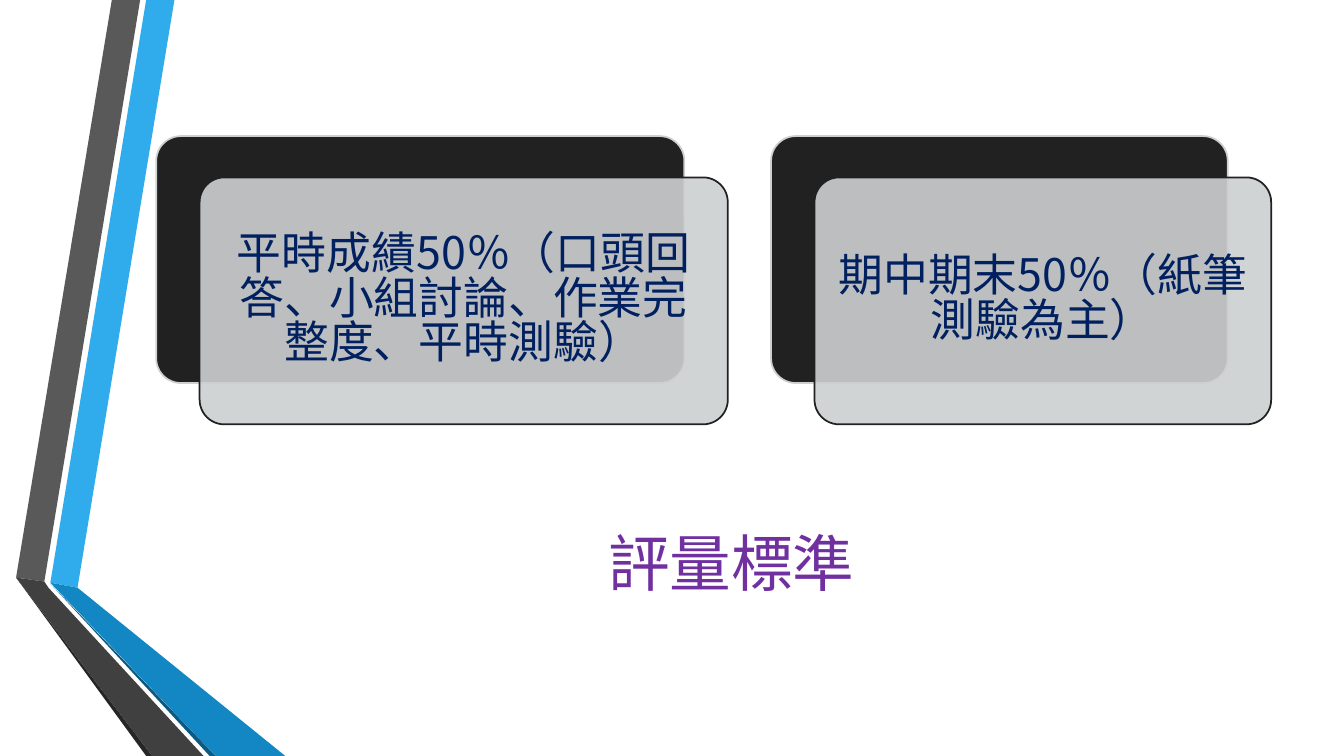
from lxml import etree
from pptx import Presentation
from pptx.dml.color import RGBColor
from pptx.enum import shapes, text
from pptx.oxml.ns import qn
from pptx.util import Pt

FONT = "Noto Sans CJK SC"
COLORS = {
    "blue": "30ACEC", "gray": "595959", "black": "262626",
    "navy": "0C5A82", "deep_blue": "1287C3", "dark_gray": "404040",
    "card_back": "212121", "card_front": "CDD0D1",
    "title": "7030A0", "body": "002060",
}
TITLE = "評量標準"
CARDS = [
    ("平時成績50％（口頭回答、小組討論、作業完整度、平時測驗）", 111.6, 377.3),
    ("期中期末50％（紙筆測驗為主）", 550.8, 326.2),
]
CARD_TOP, CARD_HEIGHT = 97.2, 176.4
CARD_SHIFT_X, CARD_SHIFT_Y = 31, 29.5
RIBBONS = [
    ("blue", [(36, 416.2), (55.4, 419.8), (124.6, 0), (104.4, 0)]),
    ("gray", [(100.1, 0), (79.9, 0), (11.5, 412.6), (31.7, 415.4)]),
    ("black", [(11.5, 412.6), (104.4, 540), (108.7, 540)]),
    ("navy", [(36, 416.9), (149.8, 540), (154.1, 540)]),
    ("deep_blue", [(36, 416.2), (154.1, 540), (203.8, 540), (55.4, 419.8)]),
    ("dark_gray", [(145.4, 540), (34.6, 419.8), (31.7, 415.4),
                   (11.5, 412.6), (108.7, 540)]),
]


def rgb(name):
    return RGBColor.from_string(COLORS[name])


def paint(sp, fill, line=None):
    sp.shadow.inherit = False
    sp.fill.solid()
    sp.fill.fore_color.rgb = rgb(fill)
    if line:
        sp.line.color.rgb = rgb(line)
        sp.line.width = Pt(1.25)
    else:
        sp.line.fill.background()


def write(sp, content, size, color, inset, spacing):
    tf = sp.text_frame
    frame = {"word_wrap": True, "auto_size": text.MSO_AUTO_SIZE.NONE,
             "vertical_anchor": text.MSO_ANCHOR.MIDDLE}
    frame.update({f"margin_{side}": Pt(inset)
                  for side in ("left", "right", "top", "bottom")})
    for key, value in frame.items():
        setattr(tf, key, value)
    p = tf.paragraphs[0]
    p.alignment = text.PP_ALIGN.CENTER
    p.line_spacing = spacing
    r = p.add_run()
    r.text = content
    for key, value in {"size": Pt(size), "name": FONT, "bold": False}.items():
        setattr(r.font, key, value)
    r.font.color.rgb = rgb(color)
    etree.SubElement(r._r.get_or_add_rPr(), qn("a:ea")).set("typeface", FONT)


def add_ribbon(s, color, points):
    corners = [(Pt(x), Pt(y)) for x, y in points]
    builder = s.shapes.build_freeform(*corners[0], scale=1.0)
    builder.add_line_segments(corners[1:], close=True)
    paint(builder.convert_to_shape(), color)


def add_card(s, left, top, width, fill, line):
    sp = s.shapes.add_shape(shapes.MSO_SHAPE.ROUNDED_RECTANGLE,
                            Pt(left), Pt(top), Pt(width), Pt(CARD_HEIGHT))
    sp.adjustments[0] = 0.1
    paint(sp, fill, line)
    return sp


def main():
    prs = Presentation()
    prs.slide_width, prs.slide_height = Pt(960), Pt(540)
    s = prs.slides.add_slide(prs.slide_layouts[5])

    for color, points in RIBBONS:
        add_ribbon(s, color, points)

    title = s.shapes.title
    place = {"left": 139, "top": 350.6, "width": 766.8, "height": 108.7}
    for key, value in place.items():
        setattr(title, key, Pt(value))
    write(title, TITLE, 44, "title", 3.6, 0.9)

    for content, left, width in CARDS:
        add_card(s, left, CARD_TOP, width, "card_back", "card_front")
        front = add_card(s, left + CARD_SHIFT_X, CARD_TOP + CARD_SHIFT_Y,
                         width, "card_front", "card_back")
        tint = front.fill._xPr.find(".//" + qn("a:srgbClr"))
        etree.SubElement(tint, qn("a:alpha")).set("val", "90000")
        write(front, content, 32, "body", 9.6, 0.83)

    prs.save("out.pptx")


if __name__ == "__main__":
    main()
